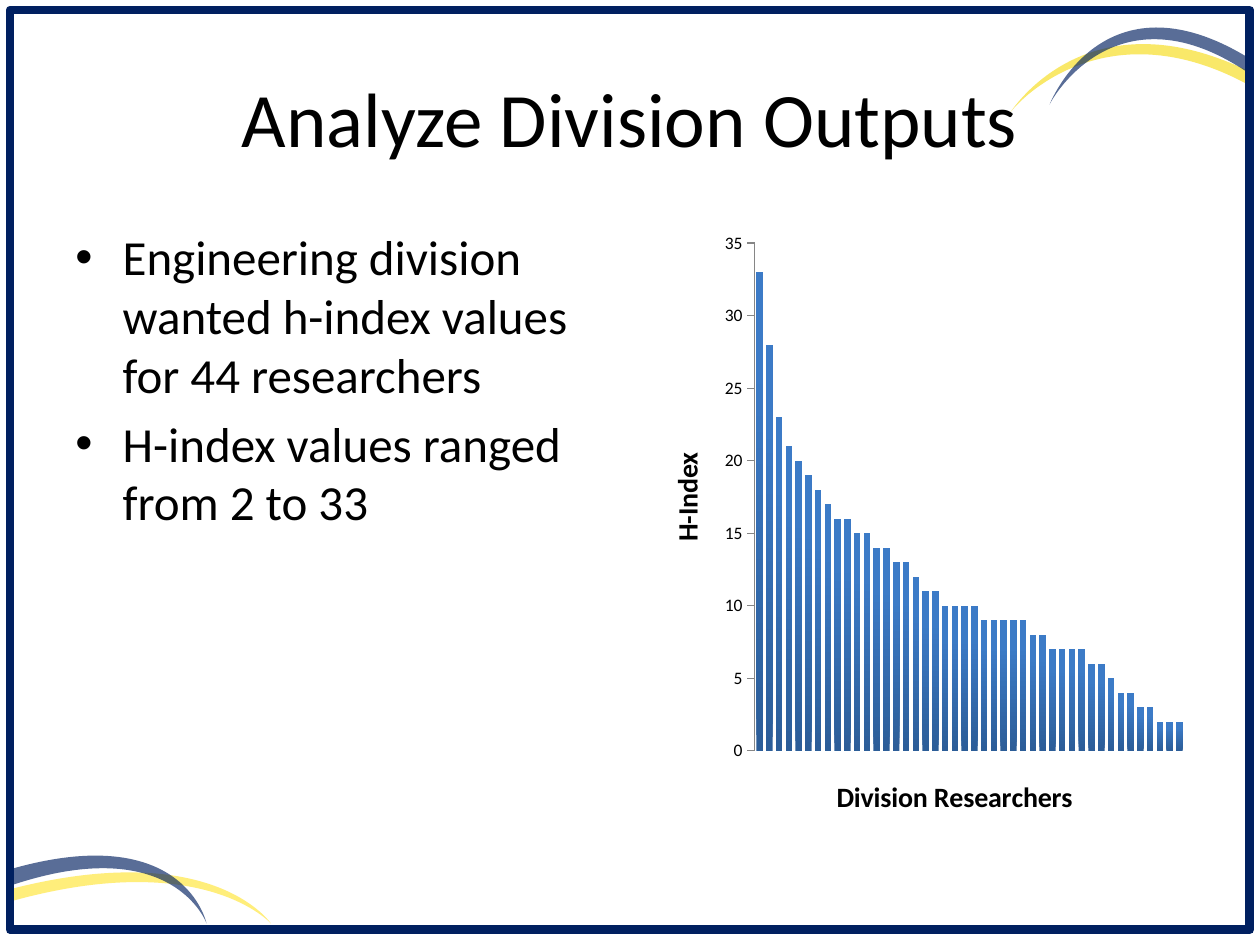
from lxml import etree
from pptx import Presentation
from pptx import util as u
from pptx.chart import data as chart_data
from pptx.dml import color
from pptx.enum import chart as ch, shapes, text
from pptx.oxml import ns

FONT = "Calibri"
NAVY = "002060"


def rgb(hex_string):
    return color.RGBColor.from_string(hex_string)


def set_format(target, values):
    """Set every attribute in values; a "color" entry is a hex string."""
    for name, value in values.items():
        if name == "color":
            target.color.rgb = rgb(value)
        else:
            setattr(target, name, value)


presentation = Presentation()
set_format(presentation, {"slide_width": u.Inches(10), "slide_height": u.Inches(7.5)})
slide = presentation.slides.add_slide(presentation.slide_layouts[6])

# Corner swooshes: a start point, then three control points for each cubic curve
swooshes = [
    ("F6DC1A", False, [(9.92, 0.68), (8.74, 0.03), (8.03, 0.85), (8, 0.92),
                       (8, 0.92), (8.59, -0.08), (9.92, 0.57)]),
    (NAVY, False, [(9.91, 0.58), (8.88, -0.12), (8.36, 0.76), (8.33, 0.83),
                   (8.33, 0.83), (8.75, -0.25), (9.91, 0.46)]),
    ("FFE535", True, [(0.11, 7.05), (1.7, 6.65), (2.15, 7.33), (2.15, 7.33),
                      (2.15, 7.33), (1.62, 6.73), (0.1, 7.15)]),
    (NAVY, True, [(0.08, 7.03), (1.32, 6.61), (1.62, 7.27), (1.64, 7.33),
                  (1.64, 7.33), (1.47, 6.5), (0.08, 6.9)]),
]
for fill_color, closed, points in swooshes:
    start, *controls = [tuple(map(u.Inches, point)) for point in points]
    builder = slide.shapes.build_freeform(*start, scale=1.0)
    builder.add_line_segments(controls, close=closed)
    swoosh = builder.convert_to_shape()
    swoosh.shadow.inherit = False
    swoosh.line.fill.background()
    swoosh.fill.solid()
    swoosh.fill.fore_color.rgb = rgb(fill_color)
    solid_color = swoosh.fill._xPr.find(".//" + ns.qn("a:srgbClr"))
    etree.SubElement(solid_color, ns.qn("a:alpha"), val="65000")
    # Turn each three line segments into one cubic curve
    segments = swoosh._element.findall(".//" + ns.qn("a:lnTo"))
    for first in range(0, len(segments), 3):
        curve = etree.Element(ns.qn("a:cubicBezTo"))
        segments[first].addprevious(curve)
        for segment in segments[first:first + 3]:
            curve.append(segment[0])
            segment.getparent().remove(segment)

border = slide.shapes.add_shape(
    shapes.MSO_SHAPE.RECTANGLE, *map(u.Inches, (0.08, 0.08, 9.84, 7.3)))
border.shadow.inherit = False
border.fill.background()
set_format(border.line, {"color": NAVY, "width": u.Pt(5)})

# Title and bulleted text
text_blocks = [
    ((0.5, 0.3, 9, 1.25), 44, text.MSO_ANCHOR.MIDDLE, False, ["Analyze Division Outputs"]),
    ((0.5, 1.75, 4.42, 4.95), 28, text.MSO_ANCHOR.TOP, True,
     ["Engineering division wanted h-index values for 44 researchers",
      "H-index values ranged from 2 to 33"]),
]
for place, size, anchor, bulleted, lines in text_blocks:
    frame = slide.shapes.add_textbox(*map(u.Inches, place)).text_frame
    set_format(frame, {"word_wrap": True, "vertical_anchor": anchor})
    for index, line in enumerate(lines):
        paragraph = frame.add_paragraph() if index else frame.paragraphs[0]
        run = paragraph.add_run()
        run.text = line
        set_format(run.font, {"name": FONT, "size": u.Pt(size), "color": "000000"})
        if bulleted:
            paragraph.space_before = u.Pt(size * 0.2)
            properties = paragraph._p.get_or_add_pPr()
            properties.set("marL", str(u.Inches(3 / 8)))
            properties.set("indent", str(-u.Inches(3 / 8)))
            etree.SubElement(properties, ns.qn("a:buFont"), typeface="Arial")
            etree.SubElement(properties, ns.qn("a:buChar"), char="•")
        else:
            paragraph.alignment = text.PP_ALIGN.CENTER

# Chart of h-index values, one column per researcher
h_index_values = [
    33, 28, 23, 21, 20, 19, 18, 17, 16, 16, 15, 15, 14, 14, 13, 13, 12, 11, 11, 10, 10, 10,
    10, 9, 9, 9, 9, 9, 8, 8, 7, 7, 7, 7, 6, 6, 5, 4, 4, 3, 3, 2, 2, 2]
chart_width, chart_height = 4.42, 4.95
data = chart_data.CategoryChartData()
data.categories = [str(number + 1) for number in range(len(h_index_values))]
data.add_series("Series 1", h_index_values)
chart = slide.shapes.add_chart(
    ch.XL_CHART_TYPE.COLUMN_CLUSTERED,
    *map(u.Inches, (5.08, 1.75, chart_width, chart_height)), data).chart
set_format(chart, {"has_legend": False, "has_title": False})
set_format(chart.font, {"name": FONT, "size": u.Pt(10), "color": "000000"})

plot = chart.plots[0]
set_format(plot, {"gap_width": 50, "vary_by_categories": False})
column_fill = plot.series[0].format.fill
column_fill.gradient()
column_fill.gradient_angle = 90
for stop, position, stop_color in zip(column_fill.gradient_stops, (0, 0.8), ("2C5D98", "3C7BC7")):
    set_format(stop, {"position": position, "color": stop_color})

chart.category_axis.visible = False
set_format(chart.value_axis, {
    "has_major_gridlines": False, "minimum_scale": 0, "maximum_scale": 35, "major_unit": 5,
    "major_tick_mark": ch.XL_TICK_MARK.OUTSIDE})
set_format(chart.value_axis.format.line, {"color": "868686", "width": u.Pt(0.75)})
for axis, title in ((chart.category_axis, "Division Researchers"), (chart.value_axis, "H-Index")):
    title_frame = axis.axis_title.text_frame
    title_frame.text = title
    set_format(title_frame.paragraphs[0].runs[0].font, {
        "name": FONT, "size": u.Pt(16), "bold": True, "color": "000000"})

# Fixed inner plot area, given in inches and stored as fractions of the chart
plot_area = chart._chartSpace.chart.plotArea
for old_layout in plot_area.findall(ns.qn("c:layout")):
    plot_area.remove(old_layout)
layout = etree.Element(ns.qn("c:layout"))
manual = etree.SubElement(layout, ns.qn("c:manualLayout"))
for tag, value in (("layoutTarget", "inner"), ("xMode", "edge"), ("yMode", "edge"),
                   ("x", 0.91 / chart_width), ("y", 0.18 / chart_height),
                   ("w", 3.41 / chart_width), ("h", 4.03 / chart_height)):
    etree.SubElement(manual, ns.qn("c:" + tag), val=str(value))
plot_area.insert(0, layout)

presentation.save("out.pptx")
